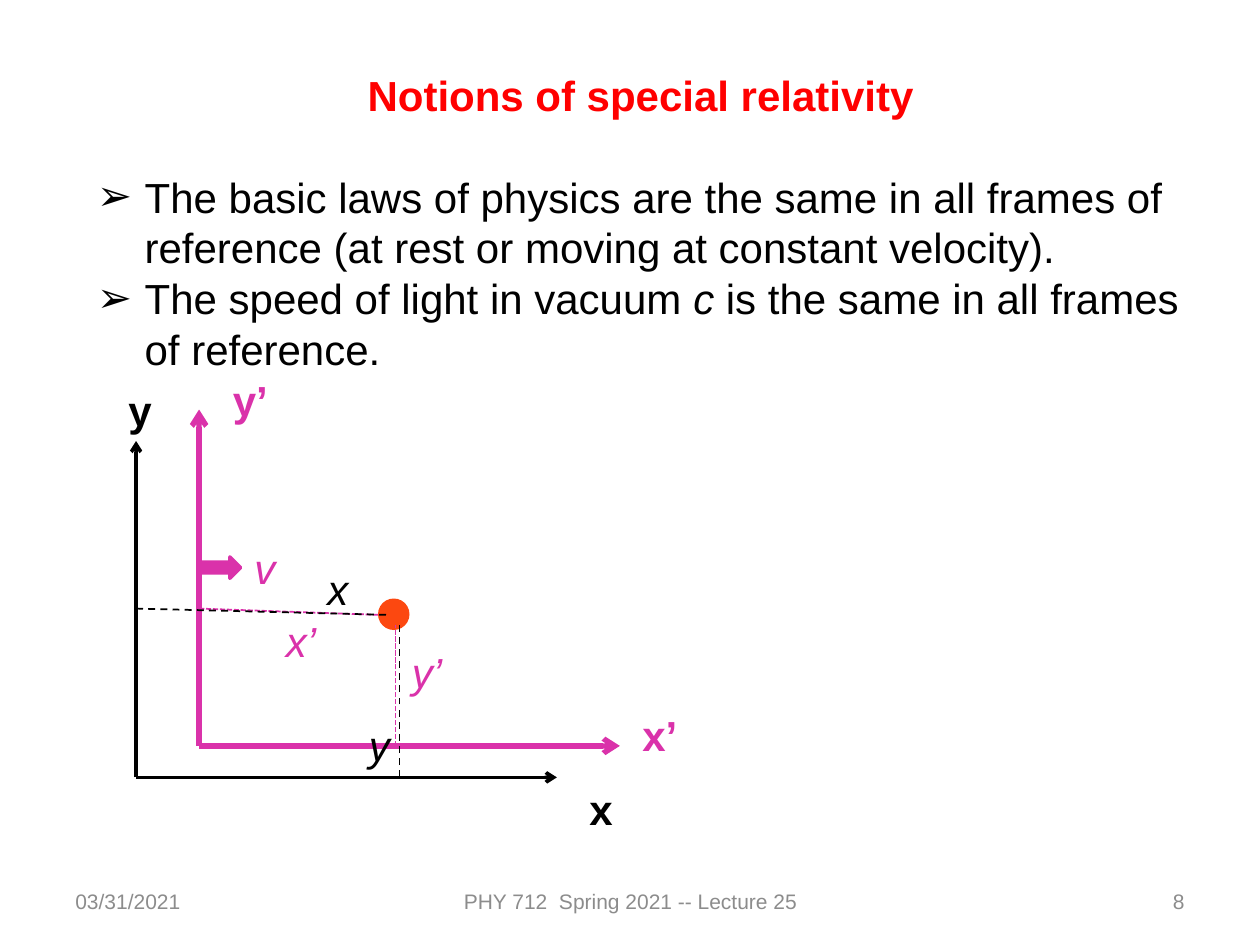
from dataclasses import dataclass
from lxml.etree import SubElement
from pptx import Presentation
from pptx.dml.color import RGBColor
from pptx.enum.dml import MSO_LINE
from pptx.enum.shapes import MSO_CONNECTOR, MSO_SHAPE
from pptx.enum.text import MSO_ANCHOR, PP_ALIGN
from pptx.oxml.ns import qn
from pptx.util import Inches, Pt


@dataclass(frozen=True)
class Theme:
    font: str = "Arial"
    black: str = "000000"
    pink: str = "DA32AA"
    red: str = "FF0000"
    ball: str = "FC4810"
    gray: str = "8C8C8C"
    body: int = 24
    small: int = 12
    pitch: int = 29


@dataclass(frozen=True)
class Run:
    text: str
    color: str
    size: int
    bold: bool = False
    ital: bool = False


@dataclass(frozen=True)
class Line:
    start: tuple[float, float]
    end: tuple[float, float]
    color: str
    width: float = 1
    dash: MSO_LINE | None = None
    arrow: bool = False


@dataclass(frozen=True)
class Label:
    text: str
    left: float
    top: float
    color: str
    axis: bool = False


T = Theme()


def add_box(slide, left: float, top: float, width: float, height: float):
    box = slide.shapes.add_textbox(
        Inches(left), Inches(top), Inches(width), Inches(height))
    box.text_frame.word_wrap = True
    return box.text_frame


def add_runs(para, runs: list[Run], align=PP_ALIGN.LEFT) -> None:
    para.alignment = align
    for item in runs:
        run = para.add_run()
        run.text = item.text
        font = run.font
        font.name, font.size = T.font, Pt(item.size)
        font.bold, font.italic = item.bold, item.ital
        font.color.rgb = RGBColor.from_string(item.color)
        if item.size == T.body:
            para.line_spacing = Pt(T.pitch)


def add_bullet(para) -> None:
    props = para._p.get_or_add_pPr()
    props.set("marL", str(Inches(0.38)))
    props.set("indent", str(-Inches(0.38)))
    SubElement(props, qn("a:buFont"), typeface=T.font)
    SubElement(props, qn("a:buChar"), char="➢")


def add_line(slide, line: Line) -> None:
    ends = [Inches(v) for v in (*line.start, *line.end)]
    shape = slide.shapes.add_connector(MSO_CONNECTOR.STRAIGHT, *ends)
    shape.line.color.rgb = RGBColor.from_string(line.color)
    shape.line.width = Pt(line.width)
    if line.dash is not None:
        shape.line.dash_style = line.dash
    if line.arrow:
        SubElement(shape.line._get_or_add_ln(), qn("a:tailEnd"), type="arrow")
    SubElement(shape._element.spPr, qn("a:effectLst"))


def add_axes(slide, left: float, base: float, color: str, width: float) -> None:
    for end in ((left, base - 2.67), (left + 3.34, base)):
        add_line(slide, Line((left, base), end, color, width, arrow=True))


def add_solid(slide, kind: MSO_SHAPE, left: float, top: float,
              width: float, height: float, color: str, edge: float = 0) -> None:
    shape = slide.shapes.add_shape(
        kind, Inches(left), Inches(top), Inches(width), Inches(height))
    shape.shadow.inherit = False
    shape.fill.solid()
    shape.fill.fore_color.rgb = RGBColor.from_string(color)
    if edge:
        shape.line.color.rgb = RGBColor.from_string(color)
        shape.line.width = Pt(edge)
    else:
        shape.line.fill.background()


def add_label(slide, label: Label) -> None:
    frame = add_box(slide, label.left, label.top, 0.5, 0.5)
    add_runs(frame.paragraphs[0], [Run(
        label.text, label.color, T.body, label.axis, not label.axis)])


def add_footer(slide) -> None:
    for text, left, width, align in (
        ("03/31/2021", 0.5, 2.33, PP_ALIGN.LEFT),
        ("PHY 712  Spring 2021 -- Lecture 25", 3.42, 3.17, PP_ALIGN.CENTER),
        ("8", 7.17, 2.33, PP_ALIGN.RIGHT),
    ):
        frame = add_box(slide, left, 6.95, width, 0.4)
        frame.vertical_anchor = MSO_ANCHOR.MIDDLE
        add_runs(frame.paragraphs[0], [Run(text, T.gray, T.small)], align)


def add_body(slide) -> None:
    frame = add_box(slide, 0.67, 0.5, 8.83, 2.52)
    title = frame.paragraphs[0]
    add_runs(title, [Run("Notions of special relativity", T.red, T.body, True)],
             PP_ALIGN.CENTER)
    title.space_after = Pt(T.pitch)
    for runs in (
        [Run("The basic laws of physics are the same in all frames of "
             "reference (at rest or moving at constant velocity).",
             T.black, T.body)],
        [Run("The speed of light in vacuum ", T.black, T.body),
         Run("c", T.black, T.body, ital=True),
         Run(" is the same in all frames of reference.", T.black, T.body)],
    ):
        para = frame.add_paragraph()
        add_runs(para, runs)
        add_bullet(para)


def add_plot(slide) -> None:
    # Fixed and moving frames
    add_axes(slide, 1.08, 6.17, T.black, 2)
    add_axes(slide, 1.58, 5.92, T.pink, 3)
    add_solid(slide, MSO_SHAPE.RIGHT_ARROW, 1.58, 4.42, 0.33, 0.17, T.pink, 2)
    add_solid(slide, MSO_SHAPE.OVAL, 3, 4.75, 0.25, 0.25, T.ball)

    # Coordinates of the particle
    for line in (
        Line((1.58, 4.83), (3, 4.88), T.pink, dash=MSO_LINE.SQUARE_DOT),
        Line((3.14, 5.92), (3.14, 4.96), T.pink, dash=MSO_LINE.SQUARE_DOT),
        Line((3.17, 6.17), (3.17, 4.96), T.black, dash=MSO_LINE.DASH),
        Line((1.08, 4.83), (3.08, 4.88), T.black, dash=MSO_LINE.DASH),
    ):
        add_line(slide, line)

    # Axis names, then lengths and speed
    for label in (
        Label("x", 4.58, 6.17, T.black, True),
        Label("y", 0.92, 3, T.black, True),
        Label("y’", 1.75, 2.92, T.pink, True),
        Label("x’", 5, 5.58, T.pink, True),
        Label("v", 1.92, 4.25, T.pink),
        Label("x’", 2.17, 4.83, T.pink),
        Label("y’", 3.17, 5.08, T.pink),
        Label("y", 2.83, 5.66, T.black),
        Label("x", 2.5, 4.42, T.black),
    ):
        add_label(slide, label)


def main() -> None:
    deck = Presentation()
    deck.slide_width, deck.slide_height = Inches(10), Inches(7.5)
    slide = deck.slides.add_slide(deck.slide_layouts[6])
    add_footer(slide)
    add_body(slide)
    add_plot(slide)
    deck.save("out.pptx")


if __name__ == "__main__":
    main()
